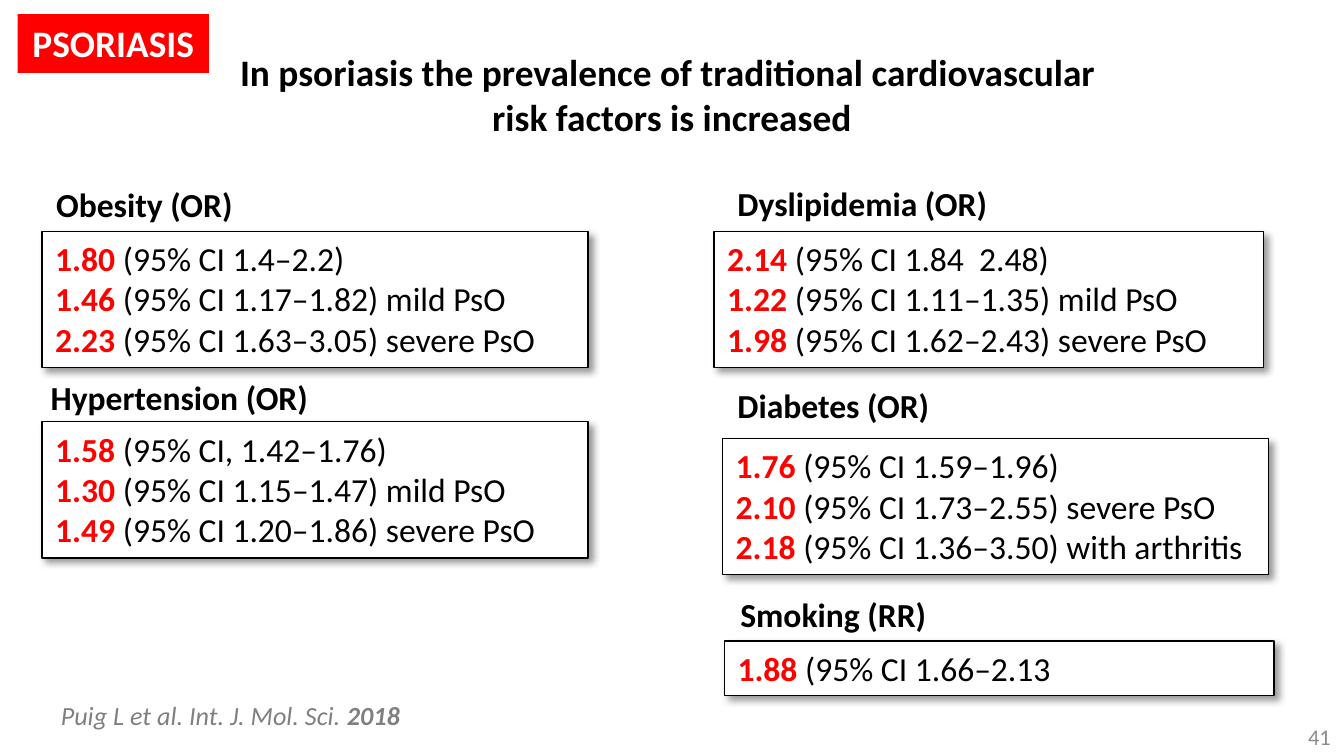
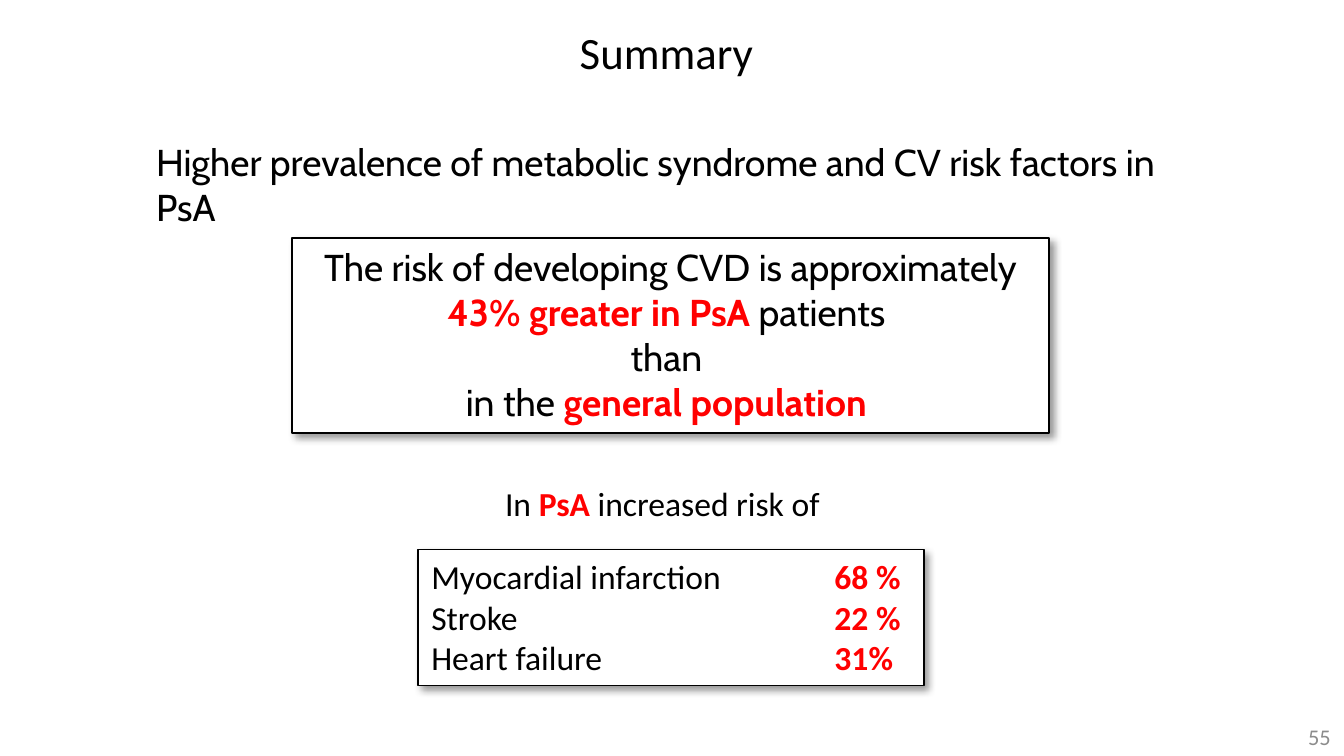
from lxml.etree import SubElement
from pptx import Presentation
from pptx.dml.color import RGBColor
from pptx.enum.shapes import MSO_SHAPE
from pptx.enum.text import MSO_ANCHOR, MSO_AUTO_SIZE, PP_ALIGN
from pptx.oxml.ns import qn
from pptx.util import Pt

BLACK, WHITE, RED = "000000", "FFFFFF", "FF0000"
GRAY, PALE = "808080", "8C8C8C"
SANS, ROUND = "Calibri", "Cabin"
LEFT, MID, RIGHT = PP_ALIGN.LEFT, PP_ALIGN.CENTER, PP_ALIGN.RIGHT


def color(code):
    """Turn a hex string into a colour."""
    return RGBColor.from_string(code)


def place(shape, box):
    """Move a shape to a box given in points."""
    shape.left, shape.top, shape.width, shape.height = map(Pt, box)


def write(shape, lines, size=18, font=SANS, ink=BLACK, hot=RED, bold=False,
          italic=False, align=LEFT, anchor=MSO_ANCHOR.TOP, wrap=False, tab=None):
    """Fill a shape with lines; parts between asterisks are bold and hot."""
    frame = shape.text_frame
    frame.auto_size = MSO_AUTO_SIZE.NONE
    frame.word_wrap = wrap
    frame.vertical_anchor = anchor
    for i, line in enumerate(lines):
        para = frame.add_paragraph() if i else frame.paragraphs[0]
        para.alignment = align
        if tab:
            stops = SubElement(para._p.get_or_add_pPr(), qn("a:tabLst"))
            SubElement(stops, qn("a:tab"), pos=str(Pt(tab)), algn="l")
        face = para.font
        face.name, face.size, face.bold, face.italic = font, Pt(size), bold, italic
        face.color.rgb = color(ink)
        for j, part in enumerate(line.split("*")):
            for k, piece in enumerate(part.split("\n")):
                if k:
                    para.add_line_break()
                if not piece:
                    continue
                run = para.add_run()
                run.text = piece
                if j % 2:
                    run.font.bold = True
                    run.font.color.rgb = color(hot)


def label(slide, box, text, **style):
    """Add a one-line text box."""
    shape = slide.shapes.add_textbox(*map(Pt, box))
    write(shape, [text], **style)


def block(slide, box, fill):
    """Add a plain filled rectangle."""
    shape = slide.shapes.add_shape(MSO_SHAPE.RECTANGLE, *map(Pt, box))
    shape.shadow.inherit = False
    shape.fill.solid()
    shape.fill.fore_color.rgb = color(fill)
    shape.line.fill.background()
    return shape


def panel(slide, box, lines, **style):
    """Add a white outlined panel with a soft shadow."""
    shape = block(slide, box, WHITE)
    shape.line.color.rgb = color(BLACK)
    shape.line.width = Pt(0.75)
    glow = SubElement(shape._element.spPr.find(qn("a:effectLst")), qn("a:outerShdw"),
                      blurRad=str(Pt(4)), dist=str(Pt(3)), dir="2700000",
                      algn="tl", rotWithShape="0")
    tone = SubElement(glow, qn("a:srgbClr"), val=BLACK)
    SubElement(tone, qn("a:alpha"), val="40000")
    write(shape, lines, wrap=True, **style)


def factor(slide, box, head, shift, lines):
    """Add a risk factor: its heading above a panel of ratios."""
    left, top, width = box
    right, rise, span = shift
    panel(slide, (left, top, width, 7.2 + 21.9 * len(lines)), lines)
    label(slide, (left + right, top - rise, span, 29), head, bold=True)


def start(deck, title, box, number, **style):
    """Add a slide with its title and number."""
    slide = deck.slides.add_slide(deck.slide_layouts[5])
    place(slide.shapes.title, box)
    write(slide.shapes.title, [title], align=MID, **style)
    label(slide, (552, 384, 168, 21.5), number, size=12, ink=PALE,
          align=RIGHT, anchor=MSO_ANCHOR.MIDDLE, wrap=True)
    return slide


def risks(deck):
    """Build the slide of risk factors in psoriasis."""
    slide = start(deck, "In psoriasis the prevalence of traditional cardiovascular \n"
                  "risk factors is increased", (36, 16.5, 648, 67.5), "41",
                  size=20, bold=True, anchor=MSO_ANCHOR.MIDDLE, wrap=True)
    factors = [
        ((22.5, 124, 292.5), "Obesity (OR)", (0.5, 29, 110),
         ["*1.80 *(95% CI 1.4–2.2)", "*1.46 *(95% CI 1.17–1.82) mild PsO",
          "*2.23 *(95% CI 1.63–3.05) severe PsO"]),
        ((22.5, 226, 292.5), "Hypertension (OR)", (-2.5, 27.5, 154),
         ["*1.58* (95% CI, 1.42–1.76)", "*1.30* (95% CI 1.15–1.47) mild PsO",
          "*1.49 *(95% CI 1.20–1.86) severe PsO"]),
        ((382.5, 124, 294.5), "Dyslipidemia (OR)", (5.5, 29.5, 150),
         ["*2.14 *(95% CI 1.84  2.48)", "*1.22* (95% CI 1.11–1.35) mild PsO",
          "*1.98* (95% CI 1.62–2.43) severe PsO"]),
        ((387, 235, 292.5), "Diabetes (OR)", (1, 32.5, 119),
         ["*1.76 *(95% CI 1.59–1.96)", "*2.10 *(95% CI 1.73–2.55) severe PsO",
          "*2.18 *(95% CI 1.36–3.50) with arthritis"]),
        ((388, 343.5, 294.5), "Smoking (RR)", (1.5, 29, 115),
         ["*1.88 *(95% CI 1.66–2.13"]),
    ]
    for item in factors:
        factor(slide, *item)
    label(slide, (25.5, 371, 197, 24.5), "Puig L et al. Int. J. Mol. Sci. *2018*",
          size=14, ink=GRAY, hot=GRAY, italic=True)
    badge = block(slide, (9.5, 7.5, 102.5, 31.5), RED)
    write(badge, ["PSORIASIS"], size=20, ink=WHITE, bold=True, align=MID)


def summary(deck):
    """Build the summary slide."""
    slide = start(deck, "Summary", (303, 9.5, 108, 36), "55", size=24)
    label(slide, (76.5, 71, 577, 31.5),
          "Higher prevalence of metabolic syndrome and CV risk factors in PsA",
          size=20, font=ROUND, wrap=True)
    panel(slide, (156.5, 127.5, 405.5, 104.5),
          ["The risk of developing CVD is approximately *43% greater in PsA *patients ",
           "than ", "in the *general population *"],
          size=20, font=ROUND, align=MID)
    label(slide, (263.5, 255, 188, 29), "In *PsA *increased risk of")
    panel(slide, (224, 294.5, 271, 72.9),
          ["Myocardial infarction \t*68 %*", "Stroke \t*22 %*", "Heart failure \t*31%*"],
          tab=216)


def main():
    """Build and save the deck."""
    deck = Presentation()
    deck.slide_width, deck.slide_height = Pt(720), Pt(405)
    risks(deck)
    summary(deck)
    deck.save("out.pptx")


if __name__ == "__main__":
    main()
